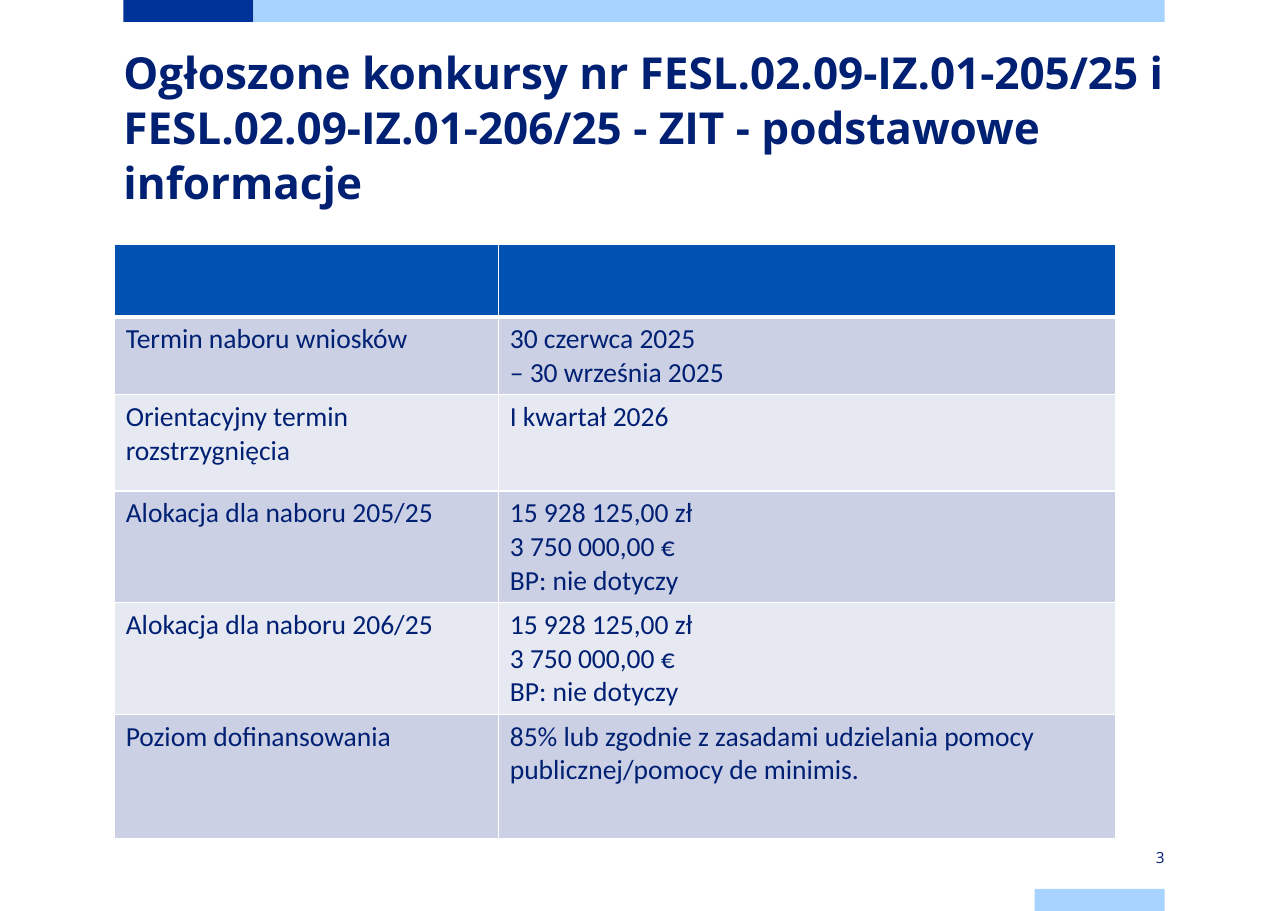
from lxml.etree import SubElement
from pptx import Presentation
from pptx.dml.color import RGBColor
from pptx.enum.shapes import MSO_SHAPE as Shape
from pptx.enum.text import MSO_ANCHOR as Anchor, MSO_AUTO_SIZE as AutoSize, PP_ALIGN as Align
from pptx.oxml.ns import qn
from pptx.util import Pt

COLORS = {
    "navy": "002073",
    "bar": "003399",
    "sky": "A6D3FF",
    "header": "0051B0",
    "band": "CCD0E4",
    "light": "E7E9F2",
    "white": "FFFFFF",
}
SLIDE_WIDTH, SLIDE_HEIGHT = 841.68, 595.44
MARGIN, CONTENT_WIDTH = 80.64, 680.4
BAR_WIDTH, BAR_HEIGHT = 84.96, 14.4

TITLE = "Ogłoszone konkursy nr FESL.02.09-IZ.01-205/25 i FESL.02.09-IZ.01-206/25 - ZIT - podstawowe informacje"
ALLOCATION = ["15 928 125,00 zł", "3 750 000,00 €", "BP: nie dotyczy"]
ROWS = [
    ("Termin naboru wniosków", ["30 czerwca 2025", "– 30 września 2025"]),
    ("Orientacyjny termin rozstrzygnięcia", ["I kwartał 2026"]),
    ("Alokacja dla naboru 205/25", ALLOCATION),
    ("Alokacja dla naboru 206/25", ALLOCATION),
    ("Poziom dofinansowania", ["85% lub zgodnie z zasadami udzielania pomocy publicznej/pomocy de minimis."]),
]
COLUMN_WIDTHS = [251, 403.4]
ROW_HEIGHTS = [47, 51, 63, 73, 73, 81]


def rgb(name):
    return RGBColor.from_string(COLORS[name])


def write_text(frame, lines, font="Calibri", size=18, bold=False, align=Align.LEFT, spacing=None):
    for index, line in enumerate(lines):
        paragraph = frame.add_paragraph() if index else frame.paragraphs[0]
        paragraph.alignment = align
        paragraph.line_spacing = spacing
        run = paragraph.add_run()
        run.text = line
        run.font.name = font
        run.font.size = Pt(size)
        run.font.bold = bold
        run.font.color.rgb = rgb("navy")


def set_insets(frame, horizontal, vertical):
    frame.margin_left = frame.margin_right = Pt(horizontal)
    frame.margin_top = frame.margin_bottom = Pt(vertical)


def add_bar(slide, left, top, width, color):
    shape = slide.shapes.add_shape(Shape.RECTANGLE, Pt(left), Pt(top), Pt(width), Pt(BAR_HEIGHT))
    shape.shadow.inherit = False
    shape.fill.solid()
    shape.fill.fore_color.rgb = rgb(color)
    shape.line.fill.background()


def add_bars(slide, left, width):
    right = left + width
    add_bar(slide, left, 0, BAR_WIDTH, "bar")
    add_bar(slide, left + BAR_WIDTH, 0, width - BAR_WIDTH, "sky")
    add_bar(slide, right - BAR_WIDTH, SLIDE_HEIGHT - BAR_HEIGHT, BAR_WIDTH, "sky")


def place_title(slide, left, top, width, height):
    title = slide.shapes.title
    title.left, title.top, title.width, title.height = Pt(left), Pt(top), Pt(width), Pt(height)
    frame = title.text_frame
    frame.word_wrap = True
    frame.auto_size = AutoSize.NONE
    frame.vertical_anchor = Anchor.TOP
    set_insets(frame, 0, 0)
    write_text(frame, [TITLE], font="Open Sans", size=28.8, bold=True, spacing=Pt(36))


def add_page_number(slide, left, top, width, height):
    frame = slide.shapes.add_textbox(Pt(left), Pt(top), Pt(width), Pt(height)).text_frame
    frame.word_wrap = True
    frame.vertical_anchor = Anchor.MIDDLE
    set_insets(frame, 0, 5.76)
    write_text(frame, ["3"], font="Open Sans", size=10, align=Align.RIGHT)


def format_cell(cell, color, top=1, bottom=1):
    properties = cell._tc.get_or_add_tcPr()
    for side, width in (("L", 1), ("R", 1), ("T", top), ("B", bottom)):
        line = SubElement(properties, qn(f"a:ln{side}"), w=str(Pt(width)))
        fill = SubElement(line, qn("a:solidFill"))
        SubElement(fill, qn("a:srgbClr"), val=COLORS["white"])
    cell.fill.solid()
    cell.fill.fore_color.rgb = rgb(color)


def add_info_table(slide, left, top):
    table = slide.shapes.add_table(
        len(ROW_HEIGHTS), len(COLUMN_WIDTHS), Pt(left), Pt(top),
        Pt(sum(COLUMN_WIDTHS)), Pt(sum(ROW_HEIGHTS)),
    ).table
    for column, width in zip(table.columns, COLUMN_WIDTHS):
        column.width = Pt(width)
    for row, height in zip(table.rows, ROW_HEIGHTS):
        row.height = Pt(height)
    for cell in table.rows[0].cells:
        format_cell(cell, "header", bottom=3)
    for index, (label, values) in enumerate(ROWS, 1):
        for cell, lines in zip(table.rows[index].cells, ([label], values)):
            format_cell(cell, "band" if index % 2 else "light", top=3 if index == 1 else 1)
            write_text(cell.text_frame, lines)


def main():
    presentation = Presentation()
    presentation.slide_width, presentation.slide_height = Pt(SLIDE_WIDTH), Pt(SLIDE_HEIGHT)
    slide = presentation.slides.add_slide(presentation.slide_layouts[5])
    add_bars(slide, MARGIN, CONTENT_WIDTH)
    place_title(slide, MARGIN, 28, CONTENT_WIDTH, 85)
    add_page_number(slide, MARGIN + CONTENT_WIDTH - BAR_WIDTH, 553, BAR_WIDTH, BAR_HEIGHT)
    add_info_table(slide, 75, 160)
    presentation.save("out.pptx")


if __name__ == "__main__":
    main()
